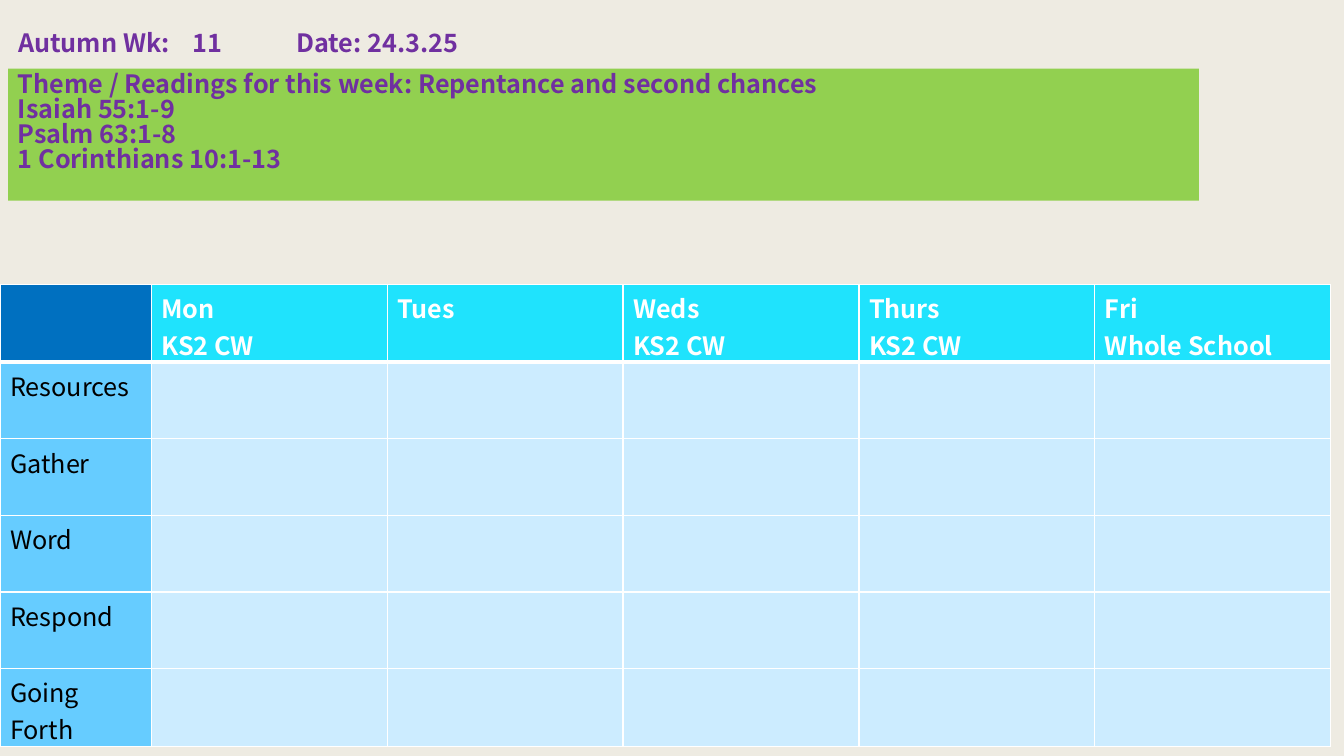
from lxml.etree import SubElement
from pptx import Presentation
from pptx.dml.color import RGBColor
from pptx.enum.shapes import MSO_SHAPE
from pptx.enum.text import MSO_ANCHOR, MSO_AUTO_SIZE, PP_ALIGN
from pptx.oxml.ns import qn
from pptx.util import Inches, Pt

FONT = "Noto Sans CJK JP"
COLOURS = {
    "background": "EEEBE2", "purple": "7030A0", "green": "92D050",
    "corner": "0070C0", "day": "1FE3FD", "stage": "66CCFF",
    "blank": "CCECFF", "white": "FFFFFF", "black": "000000",
}
DAYS = ["", "Mon\nKS2 CW", "Tues", "Weds\nKS2 CW", "Thurs\nKS2 CW", "Fri\nWhole School"]
STAGES = ["Resources", "Gather", "Word", "Respond", "Going Forth"]
READINGS = [
    "Theme / Readings for this week: Repentance and second chances",
    "Isaiah 55:1-9",
    "Psalm 63:1-8",
    "1 Corinthians 10:1-13",
]


class WeekPlan:
    def __init__(self, presentation):
        self.slide = presentation.slides.add_slide(presentation.slide_layouts[5])
        self.paint(self.slide.background.fill, "background")

    def paint(self, fill, colour):
        fill.solid()
        fill.fore_color.rgb = RGBColor.from_string(COLOURS[colour])

    def style(self, frame, colour, bold, spacing=None):
        for paragraph in frame.paragraphs:
            paragraph.alignment = PP_ALIGN.LEFT
            if spacing:
                paragraph.line_spacing = spacing
            font = paragraph.font
            font.name, font.size, font.bold = FONT, Pt(18), bold
            font.color.rgb = RGBColor.from_string(COLOURS[colour])

    def fill_frame(self, frame, text):
        frame.text = text
        frame.word_wrap = True
        frame.auto_size = MSO_AUTO_SIZE.NONE
        frame.vertical_anchor = MSO_ANCHOR.TOP

    def heading(self, text, tab_stops, left, top, width, height):
        title = self.slide.shapes.title
        title.left, title.top = Inches(left), Inches(top)
        title.width, title.height = Inches(width), Inches(height)
        self.fill_frame(title.text_frame, text)
        properties = title.text_frame.paragraphs[0]._p.get_or_add_pPr()
        tabs = SubElement(properties, qn("a:tabLst"))
        for stop in tab_stops:
            SubElement(tabs, qn("a:tab"), pos=str(Inches(stop)), algn="l")
        self.style(title.text_frame, "purple", True, 0.83)

    def panel(self, lines, left, top, width, height):
        panel = self.slide.shapes.add_shape(
            MSO_SHAPE.RECTANGLE, Inches(left), Inches(top), Inches(width), Inches(height))
        panel.shadow.inherit = False
        panel.line.fill.background()
        self.paint(panel.fill, "green")
        self.fill_frame(panel.text_frame, "\n".join(lines))
        self.style(panel.text_frame, "purple", True, 0.83)

    def borders(self, cell, row):
        widths = {"L": 1, "R": 1, "T": 3 if row == 1 else 1, "B": 3 if row == 0 else 1}
        properties = cell._tc.get_or_add_tcPr()
        for side, width in widths.items():
            line = SubElement(properties, qn(f"a:ln{side}"), w=str(Pt(width)))
            solid = SubElement(line, qn("a:solidFill"))
            SubElement(solid, qn("a:srgbClr"), val=COLOURS["white"])

    def timetable(self, rows, left, top, widths, row_height):
        table = self.slide.shapes.add_table(
            len(rows), len(widths), Inches(left), Inches(top),
            Inches(sum(widths)), Inches(row_height * len(rows))).table
        table.horz_banding = False
        for column, width in zip(table.columns, widths):
            column.width = Inches(width)
        for r, texts in enumerate(rows):
            table.rows[r].height = Inches(row_height)
            for c, text in enumerate(texts):
                cell = table.cell(r, c)
                cell.text = text
                cell.margin_bottom = 0
                self.borders(cell, r)
                if r == 0:
                    colour = "day" if c else "corner"
                else:
                    colour = "blank" if c else "stage"
                self.paint(cell.fill, colour)
                self.style(cell.text_frame, "black" if r else "white", r == 0)


def main():
    presentation = Presentation()
    presentation.slide_width, presentation.slide_height = Inches(13.33), Inches(7.5)
    plan = WeekPlan(presentation)
    plan.heading("Autumn Wk:\t11\tDate: 24.3.25", [1.73, 2.76], 0.08, 0.27, 12.98, 0.4)
    plan.panel(READINGS, 0.08, 0.68, 11.81, 1.31)
    stage_rows = [[stage] + [""] * (len(DAYS) - 1) for stage in STAGES]
    plan.timetable([DAYS] + stage_rows, 0, 2.82, [1.5] + [2.34] * 5, 0.76)
    presentation.save("out.pptx")


if __name__ == "__main__":
    main()
